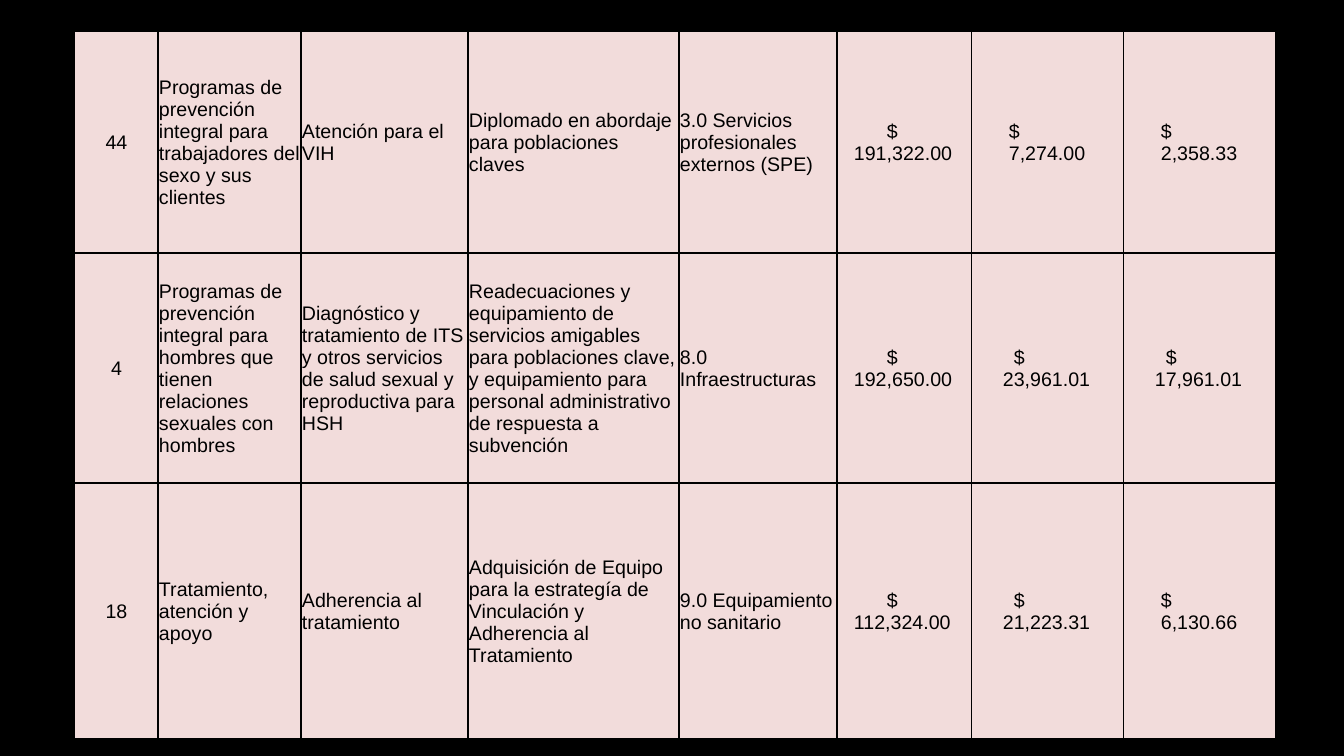
from lxml import etree
from pptx import Presentation
from pptx.dml.color import RGBColor
from pptx.enum.text import MSO_ANCHOR, PP_ALIGN
from pptx.oxml.ns import qn
from pptx.util import Pt

MIDDLE, LEFT, CENTER = MSO_ANCHOR.MIDDLE, PP_ALIGN.LEFT, PP_ALIGN.CENTER

# Content
ROWS = [
    ("44", "Programas de prevención integral para trabajadores del sexo y sus clientes",
     "Atención para el VIH", "Diplomado en abordaje para poblaciones claves",
     "3.0 Servicios profesionales externos (SPE)",
     "191,322.00", "7,274.00", "2,358.33"),
    ("4", "Programas de prevención integral para hombres que tienen relaciones "
     "sexuales con hombres",
     "Diagnóstico y tratamiento de ITS y otros servicios de salud sexual y "
     "reproductiva para HSH",
     "Readecuaciones y equipamiento de servicios amigables para poblaciones clave, "
     "y equipamiento para personal administrativo de respuesta a subvención",
     "8.0 Infraestructuras", "192,650.00", "23,961.01", "17,961.01"),
    ("18", "Tratamiento, atención y apoyo", "Adherencia al tratamiento",
     "Adquisición de Equipo para la estrategía de Vinculación y Adherencia al Tratamiento",
     "9.0 Equipamiento no sanitario", "112,324.00", "21,223.31", "6,130.66"),
]
FIRST_AMOUNT = 5

# Layout in px
SCALE = 914400 / 100.8
SLIDE = (1344, 756)
TABLE_LEFT, TABLE_TOP = 74, 31
COL_WIDTHS = [84, 143, 167, 211, 158, 135, 152, 152]
ROW_HEIGHTS = [222, 230, 256]
# Amount length: (width of the number, offset of the $ sign from its left edge)
AMOUNT_FIT = {8: (76, 0), 9: (87, 11), 10: (98, 33)}

COLORS = {"background": "000000", "cell": "F2DCDB", "text": "000000", "border": "000000"}
CELL = {"margin_left": 1, "margin_top": 1, "margin_right": 0, "margin_bottom": 0}
FONT = {"name": "Arial", "size": Pt(14), "bold": False}


def px(n):
    return round(n * SCALE)


def rgb(name):
    return RGBColor.from_string(COLORS[name])


def add_borders(cell):
    tcPr = cell._tc.get_or_add_tcPr()
    for i, side in enumerate(("lnL", "lnR", "lnT", "lnB")):
        ln = etree.Element(qn(f"a:{side}"), w=str(Pt(1)))
        fill = etree.SubElement(ln, qn("a:solidFill"))
        etree.SubElement(fill, qn("a:srgbClr"), val=COLORS["border"])
        tcPr.insert(i, ln)


def place_amount(p, amount, col_width):
    number_width, dollar_offset = AMOUNT_FIT[len(amount)]
    pPr = p._p.get_or_add_pPr()
    pPr.set("marL", str(px((col_width - number_width) // 2 - 2)))
    pPr.set("indent", str(px(dollar_offset)))


def fill_cell(cell, text, col):
    is_amount = col >= FIRST_AMOUNT
    cell.text = f"$\v{text}" if is_amount else text
    cell.vertical_anchor = MIDDLE
    for name, value in CELL.items():
        setattr(cell, name, px(value))
    cell.fill.solid()
    cell.fill.fore_color.rgb = rgb("cell")
    add_borders(cell)
    p = cell.text_frame.paragraphs[0]
    p.alignment = CENTER if col == 0 else LEFT
    if is_amount:
        place_amount(p, text, COL_WIDTHS[col])
    for r in p.runs:
        for name, value in FONT.items():
            setattr(r.font, name, value)
        r.font.color.rgb = rgb("text")


def main():
    prs = Presentation()
    prs.slide_width, prs.slide_height = map(px, SLIDE)
    s = prs.slides.add_slide(prs.slide_layouts[6])
    s.background.fill.solid()
    s.background.fill.fore_color.rgb = rgb("background")

    # Budget table
    table = s.shapes.add_table(
        len(ROWS), len(COL_WIDTHS), px(TABLE_LEFT), px(TABLE_TOP),
        px(sum(COL_WIDTHS)), px(sum(ROW_HEIGHTS))).table
    table.first_row = table.horz_banding = False
    for column, width in zip(table.columns, COL_WIDTHS):
        column.width = px(width)
    for row, height in zip(table.rows, ROW_HEIGHTS):
        row.height = px(height)
    for i, values in enumerate(ROWS):
        for j, text in enumerate(values):
            fill_cell(table.cell(i, j), text, j)

    prs.save("out.pptx")


if __name__ == "__main__":
    main()
